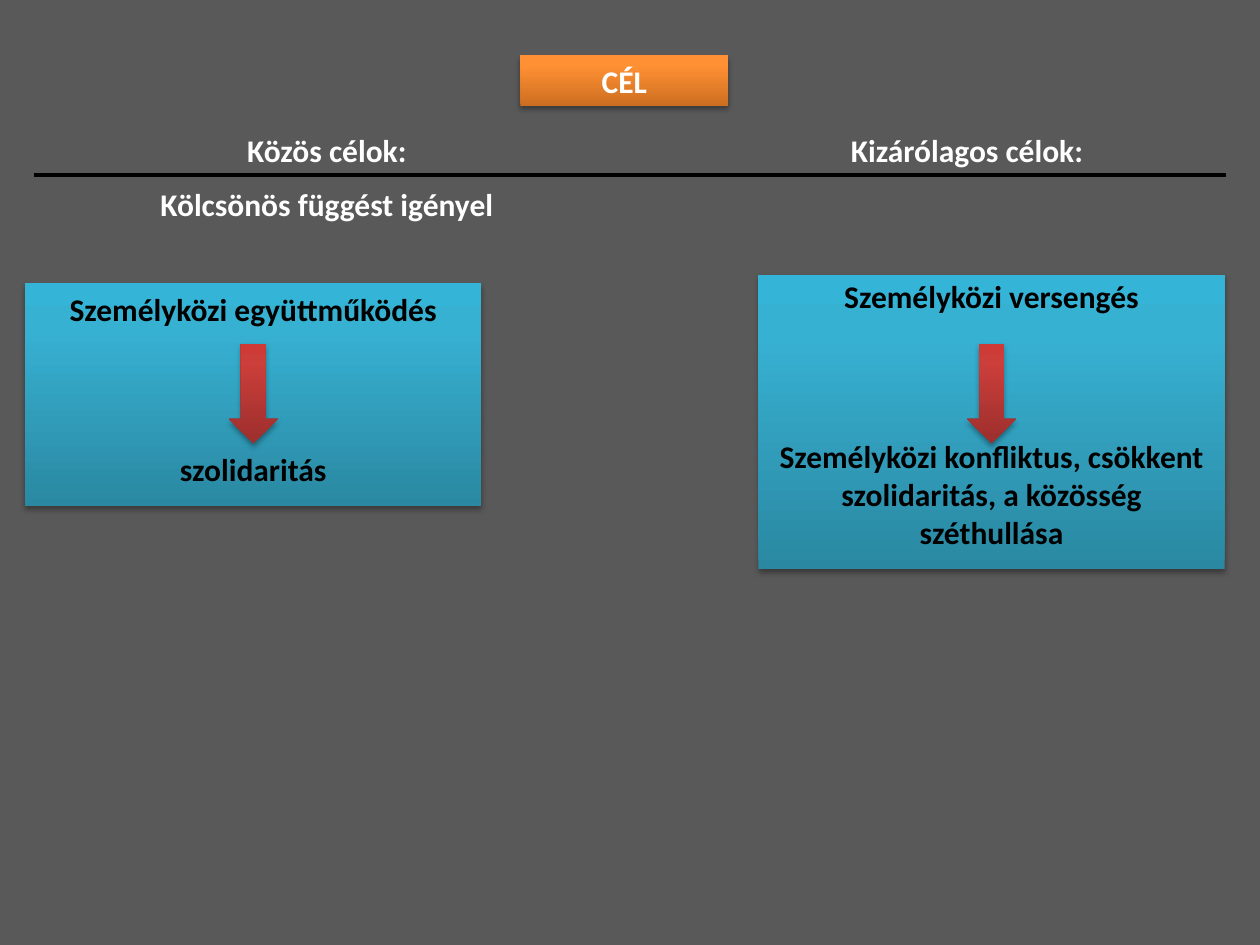
"""Build a slide contrasting shared goals with exclusive goals."""
from copy import deepcopy

from lxml.etree import SubElement
from pptx import Presentation
from pptx.dml.color import RGBColor
from pptx.enum.shapes import MSO_CONNECTOR as Connector, MSO_SHAPE as Shape
from pptx.enum.text import MSO_ANCHOR as Anchor, PP_ALIGN as Align
from pptx.oxml.ns import qn
from pptx.util import Inches, Pt

WHITE = RGBColor(0xFF, 0xFF, 0xFF)
BLACK = RGBColor(0, 0, 0)
GREY = RGBColor(0x59, 0x59, 0x59)
ORANGE = (RGBColor(0xCC, 0x6E, 0x20), RGBColor(0xFF, 0x90, 0x34), RGBColor(0xFF, 0x91, 0x36))
BLUE = (RGBColor(0x2A, 0x88, 0xA2), RGBColor(0x37, 0xB1, 0xD2), RGBColor(0x34, 0xB4, 0xD6))
RED = (RGBColor(0x9C, 0x2F, 0x2D), RGBColor(0xCB, 0x3E, 0x3A), RGBColor(0xCE, 0x3B, 0x37))
STOP_POSITIONS = (0, 0.8, 1)
LINE_GAP = Pt(9)
ARROW_GAP = Pt(70)


def add_shadow(shape):
    shape.shadow.inherit = False
    effects = shape._element.spPr.find(qn("a:effectLst"))
    shadow = SubElement(effects, qn("a:outerShdw"), blurRad=str(Pt(3.1)),
                        dist=str(Pt(1.8)), dir="5400000", rotWithShape="0")
    color = SubElement(shadow, qn("a:srgbClr"), val=str(BLACK))
    SubElement(color, qn("a:alpha"), val="35000")


def add_gradient_shape(slide, kind, left, top, width, height, colors):
    shape = slide.shapes.add_shape(kind, Inches(left), Inches(top), Inches(width), Inches(height))
    shape.fill.gradient()
    shape.fill.gradient_angle = 90
    stops = shape._element.spPr.find(".//" + qn("a:gsLst"))
    stops.append(deepcopy(stops[0]))
    for stop, position, color in zip(shape.fill.gradient_stops, STOP_POSITIONS, colors):
        stop.position = position
        stop.color.rgb = color
    shape.line.fill.background()
    add_shadow(shape)
    return shape


def write_lines(shape, lines, color, gap=LINE_GAP):
    frame = shape.text_frame
    frame.word_wrap = True
    frame.vertical_anchor = Anchor.TOP
    frame.text = "\n".join(lines)
    for index, paragraph in enumerate(frame.paragraphs):
        paragraph.alignment = Align.CENTER
        paragraph.space_before = gap if index else Pt(0)
        font = paragraph.font
        font.name, font.size, font.bold = "Calibri", Pt(18), True
        font.color.rgb = color


def add_heading(slide, left, top, width, height, lines):
    heading = slide.shapes.add_textbox(Inches(left), Inches(top), Inches(width), Inches(height))
    write_lines(heading, lines, WHITE)


def add_outcome(slide, left, top, width, height, cause, effect):
    outcome = add_gradient_shape(slide, Shape.RECTANGLE, left, top, width, height, BLUE)
    write_lines(outcome, (cause, effect), BLACK, ARROW_GAP)
    arrow_width = 0.39
    add_gradient_shape(slide, Shape.DOWN_ARROW, left + (width - arrow_width) / 2, 2.73,
                       arrow_width, 0.79, RED)
    return outcome


def add_divider(slide, left, right, y):
    divider = slide.shapes.add_connector(Connector.STRAIGHT, Inches(left), Inches(y),
                                         Inches(right), Inches(y))
    divider.line.color.rgb = BLACK
    divider.line.width = Pt(2.25)
    SubElement(divider._element.spPr, qn("a:effectLst"))


def main():
    deck = Presentation()
    deck.slide_width, deck.slide_height = Inches(10), Inches(7.5)
    slide = deck.slides.add_slide(deck.slide_layouts[6])
    slide.background.fill.solid()
    slide.background.fill.fore_color.rgb = GREY

    goal = add_gradient_shape(slide, Shape.RECTANGLE, 4.13, 0.44, 1.65, 0.4, ORANGE)
    write_lines(goal, ("CÉL",), WHITE)
    add_heading(slide, 0.51, 0.99, 4.17, 0.85, ("Közös célok:", "Kölcsönös függést igényel"))
    add_heading(slide, 6.1, 0.99, 3.15, 0.4, ("Kizárólagos célok:",))
    add_divider(slide, 0.27, 9.73, 1.39)

    add_outcome(slide, 0.2, 2.25, 3.62, 1.77, "Személyközi együttműködés", "szolidaritás")
    rivalry = add_outcome(
        slide, 6.02, 2.18, 3.7, 2.34, "Személyközi versengés",
        "Személyközi konfliktus, csökkent szolidaritás, a közösség széthullása")
    rivalry.text_frame.paragraphs[0].line_spacing = 0.9

    deck.save("out.pptx")


if __name__ == "__main__":
    main()
